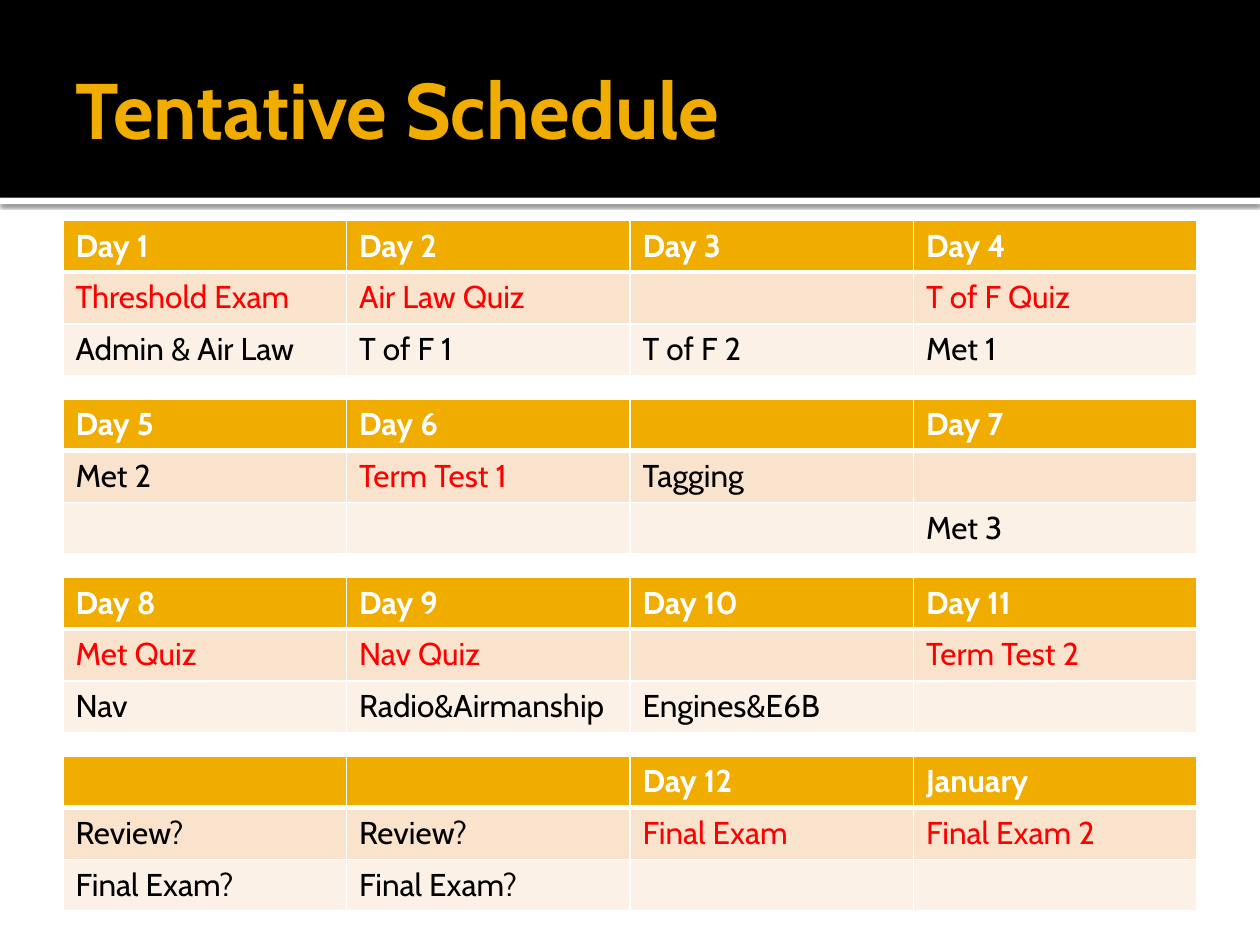
from dataclasses import dataclass

from lxml.etree import SubElement
from pptx import Presentation
from pptx.dml.color import RGBColor
from pptx.enum.shapes import MSO_SHAPE
from pptx.enum.text import MSO_ANCHOR
from pptx.oxml import parse_xml
from pptx.oxml.ns import nsdecls, qn
from pptx.util import Inches, Pt


@dataclass(frozen=True)
class Theme:
    font: str = "Cabin"
    title_size: int = 45
    cell_size: int = 18
    gold: str = "F0AD00"
    white: str = "FFFFFF"
    black: str = "000000"
    red: str = "FF0000"
    row_fills: tuple = ("F0AD00", "F9E3CC", "FCF1E7")
    rule: float = 1
    header_rule: float = 3


@dataclass(frozen=True)
class Block:
    """One table of the schedule: day names, then two rows of sessions."""
    days: tuple
    first: tuple
    second: tuple


T = Theme()
LEFT, TOP, COL_W, ROW_H = 0.5, 1.75, 2.25, 0.41
PITCH = 4.25 / 3

BLOCKS = (
    Block(("Day 1", "Day 2", "Day 3", "Day 4"),
          ("Threshold Exam", "Air Law Quiz", "", "T of F Quiz"),
          ("Admin & Air Law", "T of F 1", "T of F 2", "Met 1")),
    Block(("Day 5", "Day 6", "", "Day 7"),
          ("Met 2", "Term Test 1", "Tagging", ""),
          ("", "", "", "Met 3")),
    Block(("Day 8", "Day 9", "Day 10", "Day 11"),
          ("Met Quiz", "Nav Quiz", "", "Term Test 2"),
          ("Nav", "Radio&Airmanship", "Engines&E6B", "")),
    Block(("", "", "Day 12", "January"),
          ("Review?", "Review?", "Final Exam", "Final Exam 2"),
          ("Final Exam?", "Final Exam?", "", "")),
)


def put_text(tf, text: str, *, size: float, color: str, bold: bool = False) -> None:
    r = tf.paragraphs[0].add_run()
    r.text = text
    r.font.name = T.font
    r.font.size = Pt(size)
    r.font.bold = bold
    r.font.color.rgb = RGBColor.from_string(color)


def add_band(s, top: float, height: float, color: str):
    sp = s.shapes.add_shape(MSO_SHAPE.RECTANGLE, 0, Inches(top), Inches(10), Inches(height))
    sp.shadow.inherit = False
    sp.fill.solid()
    sp.fill.fore_color.rgb = RGBColor.from_string(color)
    sp.line.fill.background()
    return sp


def add_soft_shadow(sp) -> None:
    effects = sp._element.spPr.find(qn("a:effectLst"))
    shadow = SubElement(effects, qn("a:outerShdw"), blurRad=str(Pt(2.5)),
                        dist=str(Pt(0.8)), dir="5400000", algn="tl", rotWithShape="0")
    color = SubElement(shadow, qn("a:srgbClr"), val=T.black)
    SubElement(color, qn("a:alpha"), val="60000")


def set_borders(cell, top: float, bottom: float) -> None:
    """Draw white cell edges; lines must come before the fill in tcPr."""
    tc_pr = cell._tc.get_or_add_tcPr()
    widths = {"lnL": T.rule, "lnR": T.rule, "lnT": top, "lnB": bottom}
    for i, (tag, width) in enumerate(widths.items()):
        tc_pr.insert(i, parse_xml(
            f'<a:{tag} {nsdecls("a")} w="{Pt(width)}"><a:solidFill>'
            f'<a:srgbClr val="{T.white}"/></a:solidFill></a:{tag}>'))


def text_color(row: int, text: str) -> str:
    """Headers are white, confirmed assessments red, the rest black."""
    if row == 0:
        return T.white
    assessed = any(word in text for word in ("Exam", "Quiz", "Test"))
    return T.red if assessed and not text.endswith("?") else T.black


def add_block(s, block: Block, top: float) -> None:
    rows = (block.days, block.first, block.second)
    n = len(block.days)
    table = s.shapes.add_table(len(rows), n, Inches(LEFT), Inches(top),
                               Inches(n * COL_W), Inches(len(rows) * ROW_H)).table
    for col in table.columns:
        col.width = Inches(COL_W)
    for i, texts in enumerate(rows):
        table.rows[i].height = Inches(ROW_H)
        for j, text in enumerate(texts):
            cell = table.cell(i, j)
            cell.fill.solid()
            cell.fill.fore_color.rgb = RGBColor.from_string(T.row_fills[i])
            set_borders(cell, top=T.header_rule if i == 1 else T.rule,
                        bottom=T.header_rule if i == 0 else T.rule)
            if text:
                put_text(cell.text_frame, text, size=T.cell_size,
                         color=text_color(i, text), bold=i == 0)


def add_title(s, text: str) -> None:
    tf = s.shapes.add_textbox(Inches(0.5), Inches(0.17), Inches(9), Inches(1.37)).text_frame
    tf.word_wrap = True
    tf.vertical_anchor = MSO_ANCHOR.MIDDLE
    tf.margin_right = Inches(0.05)
    put_text(tf, text, size=T.title_size, color=T.gold, bold=True)


def main() -> None:
    prs = Presentation()
    prs.slide_width, prs.slide_height = Inches(10), Inches(7.5)
    s = prs.slides.add_slide(prs.slide_layouts[6])
    add_soft_shadow(add_band(s, 1.57, 0.05, T.white))
    add_band(s, 0, 1.57, T.black)
    add_title(s, "Tentative Schedule")
    for i, block in enumerate(BLOCKS):
        add_block(s, block, TOP + i * PITCH)
    prs.save("out.pptx")


if __name__ == "__main__":
    main()
